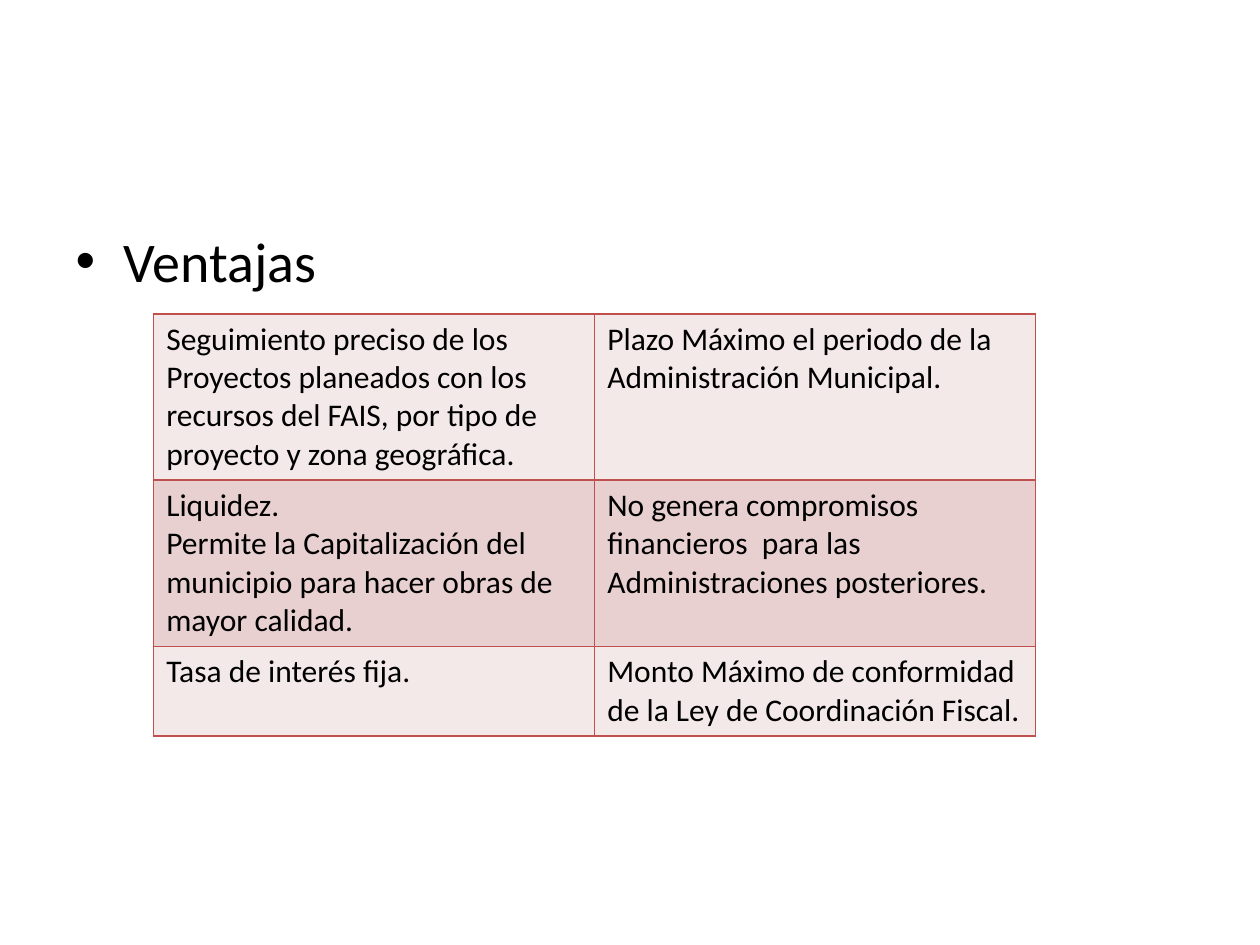
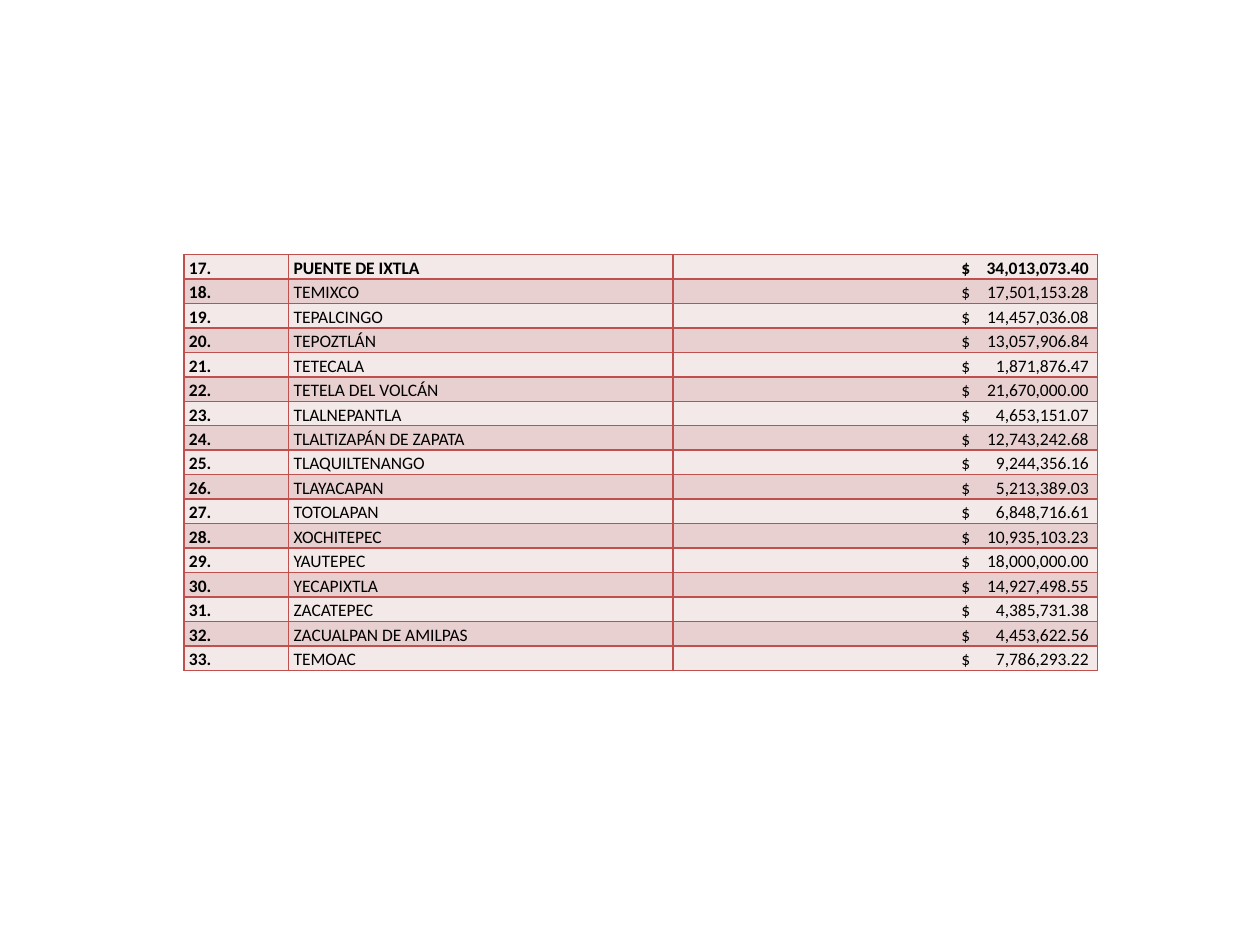
from lxml import etree
from pptx import Presentation
from pptx.dml.color import RGBColor
from pptx.enum import text
from pptx.oxml import ns
from pptx.util import Inches, Pt

BLACK = RGBColor(0x00, 0x00, 0x00)
BORDER = RGBColor(0xC0, 0x50, 0x4D)
BANDS = (RGBColor(0xF4, 0xE9, 0xE9), RGBColor(0xE8, 0xD0, 0xD0))
FONT = "Calibri"

ADVANTAGES = [
    ("Seguimiento preciso de los Proyectos planeados con los recursos del FAIS, "
     "por tipo de proyecto y zona geográfica.",
     "Plazo Máximo el periodo de la Administración Municipal."),
    ("Liquidez.\nPermite la Capitalización del municipio para hacer obras de mayor calidad.",
     "No genera compromisos financieros  para las Administraciones posteriores."),
    ("Tasa de interés fija.",
     "Monto Máximo de conformidad de la Ley de Coordinación Fiscal."),
]
FIRST_NUMBER = 17
MUNICIPALITIES = [
    ("PUENTE DE IXTLA", "34,013,073.40"),
    ("TEMIXCO", "17,501,153.28"),
    ("TEPALCINGO", "14,457,036.08"),
    ("TEPOZTLÁN", "13,057,906.84"),
    ("TETECALA", "1,871,876.47"),
    ("TETELA DEL VOLCÁN", "21,670,000.00"),
    ("TLALNEPANTLA", "4,653,151.07"),
    ("TLALTIZAPÁN DE ZAPATA", "12,743,242.68"),
    ("TLAQUILTENANGO", "9,244,356.16"),
    ("TLAYACAPAN", "5,213,389.03"),
    ("TOTOLAPAN", "6,848,716.61"),
    ("XOCHITEPEC", "10,935,103.23"),
    ("YAUTEPEC", "18,000,000.00"),
    ("YECAPIXTLA", "14,927,498.55"),
    ("ZACATEPEC", "4,385,731.38"),
    ("ZACUALPAN DE AMILPAS", "4,453,622.56"),
    ("TEMOAC", "7,786,293.22"),
]


def set_values(target, values):
    for name, value in values.items():
        setattr(target, name, value)


def format_font(font, size, bold=False):
    set_values(font, {"name": FONT, "size": Pt(size), "bold": bold})
    font.color.rgb = BLACK


def add_borders(cell):
    properties = cell._tc.get_or_add_tcPr()
    for side in ("a:lnL", "a:lnR", "a:lnT", "a:lnB"):
        line = etree.SubElement(properties, ns.qn(side), w=str(Pt(1)))
        fill = etree.SubElement(line, ns.qn("a:solidFill"))
        etree.SubElement(fill, ns.qn("a:srgbClr"), val=str(BORDER))


def add_tabs(paragraph, stops):
    tabs = etree.SubElement(paragraph._p.get_or_add_pPr(), ns.qn("a:tabLst"))
    for position, alignment in stops:
        etree.SubElement(tabs, ns.qn("a:tab"), pos=str(Inches(position)), algn=alignment)


def add_banded_table(slide, left, top, column_widths, row_heights, rows):
    """Add a bordered table with alternating row fills."""
    table = slide.shapes.add_table(
        len(rows), len(column_widths), Inches(left), Inches(top),
        Inches(sum(column_widths)), Inches(sum(row_heights))).table
    set_values(table, {"first_row": False, "horz_banding": False})
    for column, width in zip(table.columns, column_widths):
        column.width = Inches(width)
    for index, (row, height, texts) in enumerate(zip(table.rows, row_heights, rows)):
        row.height = Inches(height)
        for cell, words in zip(row.cells, texts):
            cell.text = words
            add_borders(cell)
            cell.fill.solid()
            cell.fill.fore_color.rgb = BANDS[index % 2]
    return table


def add_bullet_heading(slide, left, top, width, height, words):
    body = slide.placeholders[1]
    set_values(body, {"left": Inches(left), "top": Inches(top),
                      "width": Inches(width), "height": Inches(height)})
    body.text_frame.text = words
    paragraph = body.text_frame.paragraphs[0]
    paragraph.space_before = Pt(0)
    properties = paragraph._p.get_or_add_pPr()
    properties.set("marL", str(Inches(0.38)))
    properties.set("indent", str(Inches(-0.38)))
    etree.SubElement(properties, ns.qn("a:buFont"), typeface="Arial")
    etree.SubElement(properties, ns.qn("a:buChar"), char="•")
    format_font(paragraph.font, 32)


def build_advantages(presentation):
    slide = presentation.slides.add_slide(presentation.slide_layouts[1])
    title = slide.shapes.title
    title.element.getparent().remove(title.element)
    add_bullet_heading(slide, 0.5, 1.75, 9, 4.95, "Ventajas")
    table = add_banded_table(slide, 1.22, 2.49, (3.5, 3.5), (1.32, 1.32, 0.71), ADVANTAGES)
    for cell in table.iter_cells():
        for paragraph in cell.text_frame.paragraphs:
            format_font(paragraph.font, 18)


def build_municipalities(presentation):
    slide = presentation.slides.add_slide(presentation.slide_layouts[6])
    rows = [(f"{number}.", name, f"\t$\t{amount}")
            for number, (name, amount) in enumerate(MUNICIPALITIES, FIRST_NUMBER)]
    table = add_banded_table(slide, 1.46, 2.02, (0.83, 3.05, 3.37),
                             [0.19] * len(rows), rows)
    margins = {"margin_left": Inches(0.04), "margin_right": Inches(0.04),
               "margin_top": 0, "margin_bottom": 0}
    anchors = (text.MSO_ANCHOR.TOP, text.MSO_ANCHOR.BOTTOM, text.MSO_ANCHOR.BOTTOM)
    alignments = (text.PP_ALIGN.JUSTIFY, text.PP_ALIGN.JUSTIFY, text.PP_ALIGN.LEFT)
    for row_index, row in enumerate(table.rows):
        for column_index, cell in enumerate(row.cells):
            set_values(cell, {**margins, "vertical_anchor": anchors[column_index]})
            paragraph = cell.text_frame.paragraphs[0]
            set_values(paragraph, {"alignment": alignments[column_index],
                                   "line_spacing": 1.15})
            # Currency sign and amount each line up on a tab stop
            if column_index == 2:
                add_tabs(paragraph, ((2.25, "l"), (3.26, "r")))
            format_font(paragraph.font, 10, bold=row_index == 0 or column_index == 0)


def main():
    presentation = Presentation()
    set_values(presentation, {"slide_width": Inches(10), "slide_height": Inches(7.5)})
    build_advantages(presentation)
    build_municipalities(presentation)
    presentation.save("out.pptx")


if __name__ == "__main__":
    main()
